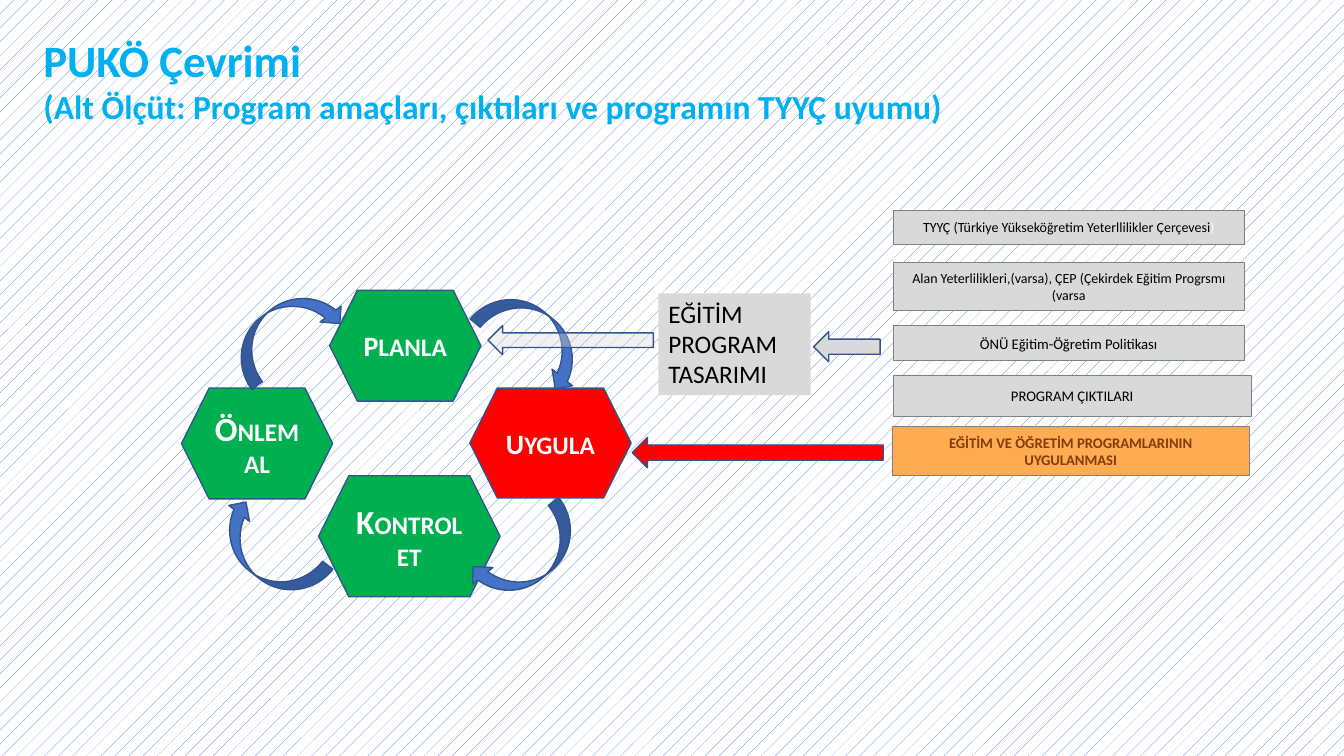
from dataclasses import dataclass
from typing import Optional

import lxml.etree
import pptx
import pptx.dml.color
import pptx.enum.dml
import pptx.enum.shapes
import pptx.enum.text
import pptx.oxml.ns
import pptx.util

RGBColor = pptx.dml.color.RGBColor
Inches = pptx.util.Inches
Shape = pptx.enum.shapes.MSO_SHAPE
Align = pptx.enum.text.PP_ALIGN
Anchor = pptx.enum.text.MSO_ANCHOR

WHITE = RGBColor(0xFF, 0xFF, 0xFF)
BLACK = RGBColor(0x00, 0x00, 0x00)
GREEN = RGBColor(0x00, 0xB0, 0x50)
RED = RGBColor(0xFF, 0x00, 0x00)
BLUE = RGBColor(0x44, 0x72, 0xC4)
NAVY = RGBColor(0x32, 0x54, 0x91)
SKY = RGBColor(0x00, 0xB0, 0xF0)
SILVER = RGBColor(0xD9, 0xD9, 0xD9)
GRAY = RGBColor(0x80, 0x80, 0x80)
ORANGE = RGBColor(0xFF, 0xAB, 0x51)
BROWN = RGBColor(0x83, 0x3C, 0x0B)


@dataclass
class Span:
    text: str
    size: float
    color: RGBColor
    bold: bool = False


@dataclass
class Step:
    left: float
    top: float
    width: float
    height: float
    fill: RGBColor
    initial: str
    rest: str
    initial_size: float


@dataclass
class Arrow:
    left: float
    top: float
    width: float
    height: float
    fill: RGBColor
    kind: Shape = Shape.LEFT_ARROW
    rotation: float = 0
    opacity: int = 100


@dataclass
class Source:
    left: float
    top: float
    width: float
    height: float
    spans: list[Span]
    fill: RGBColor = SILVER


STEPS = [
    Step(3.27, 2.88, 1.5, 1.1, GREEN, "P", "LANLA", 20),
    Step(4.66, 3.85, 1.6, 1.09, RED, "U", "YGULA", 20),
    Step(3.16, 4.72, 1.8, 1.2, GREEN, "K", "ONTROL ET", 24),
    Step(1.8, 3.85, 1.5, 1.1, GREEN, "Ö", "NLEM AL", 24),
]
CYCLE_ARROWS = [
    Arrow(left, top, 1.22, 0.52, BLUE, Shape.CURVED_DOWN_ARROW, rotation)
    for left, top, rotation in [
        (4.69, 3.09, 39.3), (4.62, 5.26, 140.9), (2.05, 5.22, 217.7), (2.22, 3.03, 323.1),
    ]
]
INPUT_ARROWS = [
    Arrow(8.07, 3.29, 0.66, 0.3, SILVER),
    Arrow(4.84, 3.23, 1.64, 0.29, SILVER, opacity=36),
    Arrow(6.27, 4.34, 2.49, 0.3, RED),
]
SOURCES = [
    Source(8.86, 2.09, 3.48, 0.33, [
        Span("TYYÇ (Türkiye Yükseköğretim Yeterllilikler Çerçevesi", 10, BLACK),
        Span(")", 10, WHITE)]),
    Source(8.86, 2.6, 3.48, 0.48, [
        Span("Alan Yeterlilikleri,(varsa), ÇEP (Çekirdek Eğitim Progrsmı (varsa", 10, BLACK)]),
    Source(8.86, 3.23, 3.48, 0.35, [Span("ÖNÜ Eğitim-Öğretim Politikası", 10.5, BLACK)]),
    Source(8.86, 3.72, 3.55, 0.41, [Span("PROGRAM ÇIKTILARI", 10.5, BLACK)]),
    Source(8.85, 4.23, 3.54, 0.49, [
        Span("EĞİTİM VE ÖĞRETİM PROGRAMLARININ UYGULANMASI", 10.5, BROWN, True)], ORANGE),
]
TITLE = [
    [Span("PUKÖ Çevrimi", 32, SKY, True)],
    [Span("(Alt Ölçüt: Program amaçları, çıktıları ve programın TYYÇ uyumu)", 24, SKY, True)],
]


def write(shape, paragraphs: list[list[Span]], align: Align, anchor: Anchor) -> None:
    frame = shape.text_frame
    frame.word_wrap = True
    frame.auto_size = pptx.enum.text.MSO_AUTO_SIZE.NONE
    frame.vertical_anchor = anchor
    for index, spans in enumerate(paragraphs):
        para = frame.add_paragraph() if index else frame.paragraphs[0]
        layout = {"alignment": align, "line_spacing": 1.0, "space_before": pptx.util.Pt(0)}
        for name, value in layout.items():
            setattr(para, name, value)
        for span in spans:
            run = para.add_run()
            run.text = span.text
            run.font.color.rgb = span.color
            style = {"name": "Calibri", "size": pptx.util.Pt(span.size), "bold": span.bold}
            for name, value in style.items():
                setattr(run.font, name, value)


def add_box(page, kind: Shape, item, line: Optional[RGBColor], weight: float = 1):
    lengths = (item.left, item.top, item.width, item.height)
    box = page.shapes.add_shape(kind, *map(Inches, lengths))
    box.shadow.inherit = False
    box.fill.solid()
    box.fill.fore_color.rgb = item.fill
    if line is None:
        box.line.fill.background()
    else:
        box.line.color.rgb = line
        box.line.width = pptx.util.Pt(weight)
    return box


def add_arrow(page, arrow: Arrow) -> None:
    box = add_box(page, arrow.kind, arrow, NAVY)
    box.rotation = arrow.rotation
    if arrow.opacity < 100:
        qn = pptx.oxml.ns.qn
        color = box._element.spPr.find(qn("a:solidFill")).find(qn("a:srgbClr"))
        lxml.etree.SubElement(color, qn("a:alpha"), val=str(arrow.opacity * 1000))


def add_step(page, step: Step) -> None:
    box = add_box(page, Shape.HEXAGON, step, NAVY)
    spans = [Span(step.initial, step.initial_size, WHITE, True), Span(step.rest, 18, WHITE, True)]
    write(box, [spans], Align.CENTER, Anchor.MIDDLE)


def add_source(page, source: Source) -> None:
    box = add_box(page, Shape.RECTANGLE, source, GRAY, 0.5)
    write(box, [source.spans], Align.CENTER, Anchor.MIDDLE)


def main() -> None:
    deck = pptx.Presentation()
    deck.slide_width, deck.slide_height = Inches(13.33), Inches(7.5)
    page = deck.slides.add_slide(deck.slide_layouts[5])

    # Dotted background
    backdrop = page.background.fill
    backdrop.patterned()
    backdrop.pattern = pptx.enum.dml.MSO_PATTERN.PERCENT_5
    backdrop.fore_color.rgb = BLUE
    backdrop.back_color.rgb = WHITE

    # Title
    title = page.shapes.title
    place = {"left": 0.33, "top": 0.27, "width": 11.63, "height": 1.04}
    for name, value in place.items():
        setattr(title, name, Inches(value))
    write(title, TITLE, Align.LEFT, Anchor.TOP)

    # Plan-do-check-act cycle
    for step in STEPS:
        add_step(page, step)
    for arrow in CYCLE_ARROWS:
        add_arrow(page, arrow)

    # Programme design and the sources that feed it
    for source in SOURCES:
        add_source(page, source)
    design = Source(6.53, 2.91, 1.51, 1.01, [Span("EĞİTİM PROGRAM TASARIMI", 18, BLACK)])
    box = add_box(page, Shape.RECTANGLE, design, None)
    write(box, [design.spans], Align.LEFT, Anchor.TOP)
    for arrow in INPUT_ARROWS:
        add_arrow(page, arrow)

    deck.save("out.pptx")


if __name__ == "__main__":
    main()
